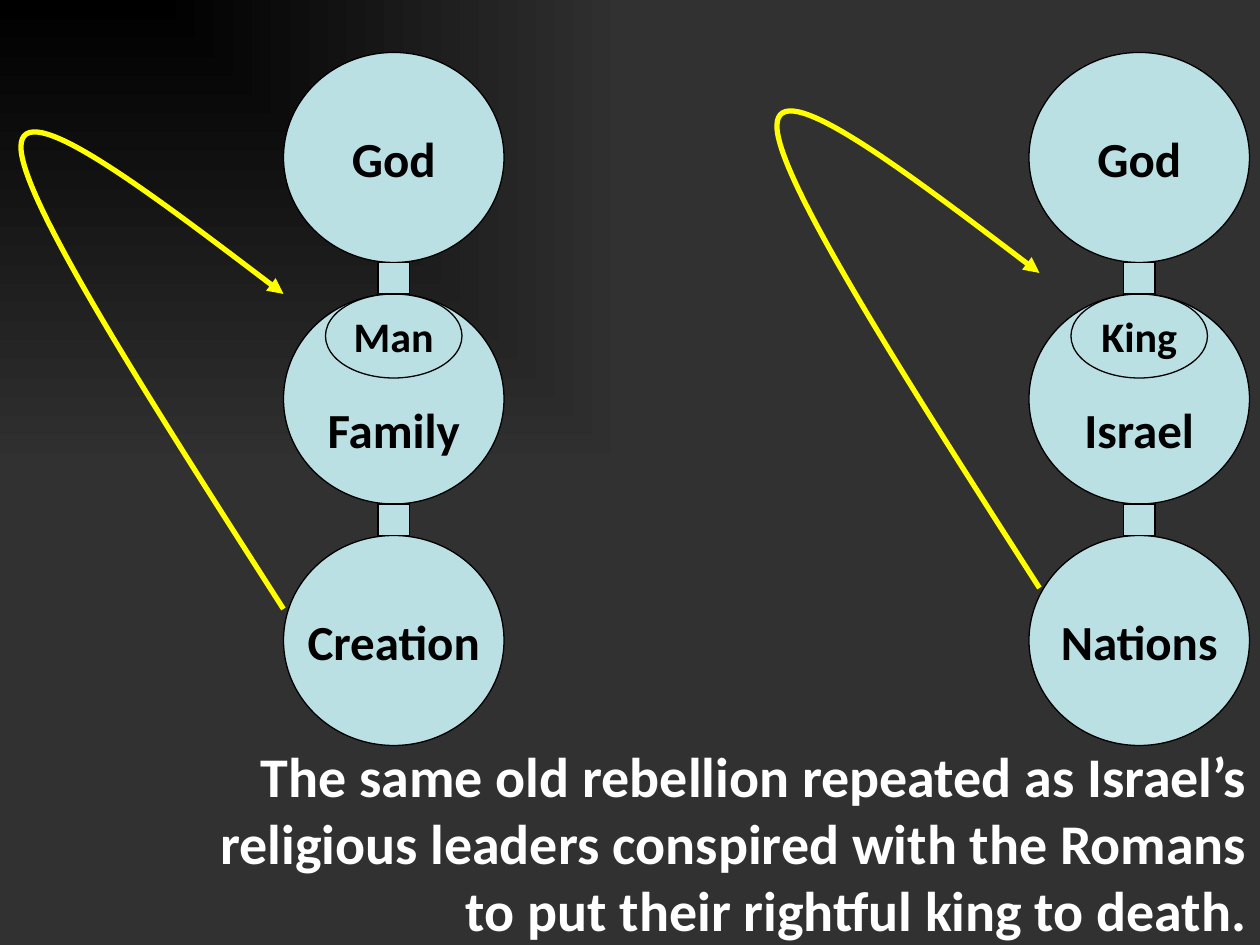
from pptx import Presentation
from pptx.dml.color import RGBColor as Rgb
from pptx.enum.shapes import MSO_SHAPE as Shape
from pptx.enum.text import MSO_ANCHOR as Anchor, PP_ALIGN as Align
from pptx.oxml import parse_xml
from pptx.oxml.ns import nsdecls, qn
from pptx.util import Pt

COLORS = {"black": "000000", "gray": "313131", "blue": "BBE0E3",
          "yellow": "FFFF00", "white": "FFFFFF"}
BIG = {"name": "Calibri", "size": Pt(28), "bold": True}
SMALL = {**BIG, "size": Pt(24)}
CAPTION = {**BIG, "size": Pt(32)}


def color(name):
    return Rgb.from_string(COLORS[name])


def paint_background(page):
    """Gradient that spreads from the top left corner."""
    fill = page.background.fill
    fill.gradient()
    for stop, name in zip(fill.gradient_stops, ("black", "gray")):
        stop.color.rgb = color(name)
    linear = page.element.find(".//" + qn("a:lin"))
    linear.getparent().replace(linear, parse_xml(
        f'<a:path {nsdecls("a")} path="rect">'
        '<a:fillToRect r="100000" b="100000"/></a:path>'))


def write(frame, text, style, ink, align):
    para = frame.paragraphs[0]
    para.alignment = align
    span = para.add_run()
    span.text = text
    for key, value in style.items():
        setattr(span.font, key, value)
    span.font.color.rgb = color(ink)


def add_part(group, kind, box, text=None, style=BIG, drop=0):
    """Outlined blue shape; drop moves its text down from the centre."""
    part = group.shapes.add_shape(kind, *map(Pt, box))
    part.shadow.inherit = False
    part.fill.solid()
    part.fill.fore_color.rgb = color("blue")
    part.line.color.rgb = color("black")
    part.line.width = Pt(0.75)
    if text:
        frame = part.text_frame
        frame.word_wrap = False
        frame.vertical_anchor = Anchor.MIDDLE
        frame.margin_top = Pt(3.6 + drop)
        write(frame, text, style, "black", Align.CENTER)


def add_chain(page, box, labels, inner_label):
    """Three linked circles, with a small ellipse in the middle one."""
    left, top, width, height = box
    gap = 18
    circle_height = (height - 2 * gap) / 3
    tops = [top + i * (circle_height + gap) for i in range(3)]
    group = page.shapes.add_group_shape()
    for label, y, drop in zip(labels, tops, (0, 34, 0)):
        add_part(group, Shape.OVAL, (left, y, width, circle_height),
                 label, drop=drop)
    add_part(group, Shape.OVAL, (left + 24, tops[1], width - 48, 48),
             inner_label, SMALL)
    for y in tops[1:]:
        add_part(group, Shape.RECTANGLE,
                 (left + (width - gap) / 2, y - gap, gap, gap))


def add_loop_arrow(page, left, top):
    """Curve from the lowest circle round to the middle one."""
    start, *points = [(150, 294), (75, 177), (0, 60), (0, 30),
                      (0, 0), (75, 57), (150, 114)]
    builder = page.shapes.build_freeform(*start, scale=Pt(1))
    builder.add_line_segments(points, close=False)
    arrow = builder.convert_to_shape(Pt(left), Pt(top))
    arrow.shadow.inherit = False
    arrow.fill.background()
    arrow.line.color.rgb = color("yellow")
    arrow.line.width = Pt(3)
    arrow.line._get_or_add_ln().append(
        parse_xml(f'<a:tailEnd {nsdecls("a")} type="triangle"/>'))

    # Every three straight segments become one Bézier curve.
    segments = list(arrow.element.iter(qn("a:lnTo")))
    for i in range(0, len(segments), 3):
        curve = parse_xml(f'<a:cubicBezTo {nsdecls("a")}/>')
        segments[i].addprevious(curve)
        for segment in segments[i:i + 3]:
            curve.append(segment[0])
            segment.getparent().remove(segment)


def add_caption(page, box, text):
    frame = page.shapes.add_textbox(*map(Pt, box)).text_frame
    frame.word_wrap = True
    write(frame, text, CAPTION, "white", Align.RIGHT)


def main():
    deck = Presentation()
    deck.slide_width, deck.slide_height = Pt(720), Pt(540)
    page = deck.slides.add_slide(deck.slide_layouts[6])
    paint_background(page)
    add_chain(page, (588, 30, 126, 396), ("God", "Israel", "Nations"), "King")
    add_chain(page, (162, 30, 126, 396), ("God", "Family", "Creation"), "Man")
    add_loop_arrow(page, 444, 42)
    add_loop_arrow(page, 12, 54)
    add_caption(page, (90, 420, 630, 124),
                "The same old rebellion repeated as Israel’s religious leaders "
                "conspired with the Romans to put their rightful king to death.")
    deck.save("out.pptx")


if __name__ == "__main__":
    main()
